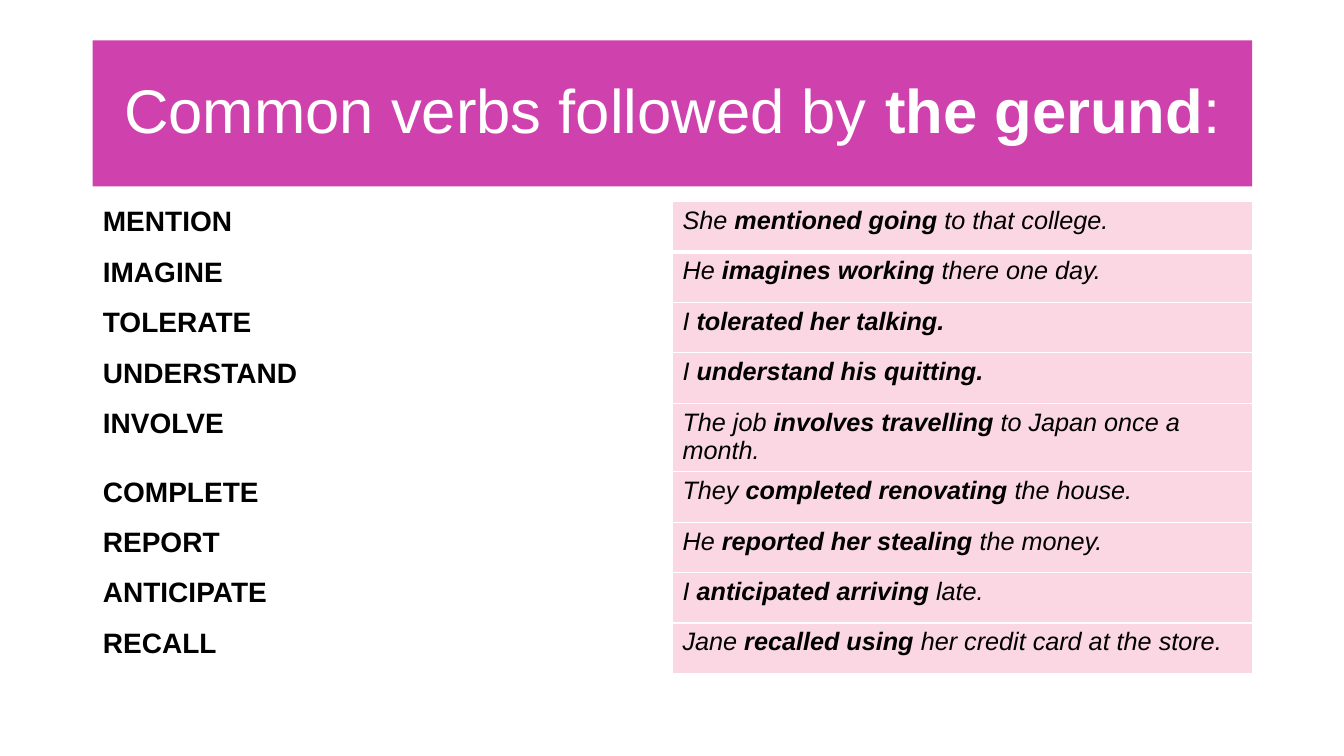
from lxml import etree
from pptx import Presentation
from pptx import util as u
from pptx.dml.color import RGBColor
from pptx.enum import shapes, text
from pptx.oxml import ns

TITLE = ("Common verbs followed by ", "the gerund", ":")
VERBS = [
    ("MENTION", ("She ", "mentioned going ", "to that college.")),
    ("IMAGINE", ("He ", "imagines working ", "there one day.")),
    ("TOLERATE", ("I ", "tolerated her talking.")),
    ("UNDERSTAND", ("I ", "understand his quitting.")),
    ("INVOLVE", ("The job ", "involves travelling ", "to Japan once a month.")),
    ("COMPLETE", ("They ", "completed renovating ", "the house.")),
    ("REPORT", ("He ", "reported her stealing ", "the money.")),
    ("ANTICIPATE", ("I ", "anticipated arriving ", "late.")),
    ("RECALL", ("Jane ", "recalled using ", "her credit card at the store.")),
]
THEME = dict(
    font="Arial", white="FFFFFF", ink="000000", banner="CF41AD", example="FAD7E3",
    title_size=44, verb_size=20, example_size=18, thin=1, thick=3,
)
LEFT, WIDTH = 0.92, 11.5
ROW, TALL_ROW = 0.5, 0.68


def write(frame, parts, size, color, italic=False, align=None, spacing=None):
    para = frame.paragraphs[0]
    para.alignment = align
    para.line_spacing = spacing
    for index, words in enumerate(parts):
        span = para.add_run()
        span.text = words
        span.font.name = THEME["font"]
        span.font.size = u.Pt(size)
        span.font.bold = index == 1 or len(parts) == 1
        span.font.italic = italic
        span.font.color.rgb = RGBColor.from_string(color)


def paint(item, color):
    item.fill.solid()
    item.fill.fore_color.rgb = RGBColor.from_string(color)


def add_borders(cell, bottom):
    properties = cell._tc.get_or_add_tcPr()
    for side in "LRTB":
        points = bottom if side == "B" else THEME["thin"]
        line = etree.SubElement(properties, ns.qn(f"a:ln{side}"), w=str(u.Pt(points)))
        fill = etree.SubElement(line, ns.qn("a:solidFill"))
        etree.SubElement(fill, ns.qn("a:srgbClr"), val=THEME["white"])


def add_banner(page):
    box = page.shapes.add_shape(
        shapes.MSO_SHAPE.RECTANGLE,
        u.Inches(LEFT), u.Inches(0.4), u.Inches(WIDTH), u.Inches(1.45),
    )
    box.shadow.inherit = False
    box.line.fill.background()
    paint(box, THEME["banner"])
    box.text_frame.word_wrap = True
    box.text_frame.vertical_anchor = text.MSO_ANCHOR.MIDDLE
    write(box.text_frame, TITLE, THEME["title_size"], THEME["white"],
          align=text.PP_ALIGN.CENTER, spacing=0.9)


def add_verbs(page):
    heights = [TALL_ROW if verb == "INVOLVE" else ROW for verb, _ in VERBS]
    table = page.shapes.add_table(
        len(VERBS), 2,
        u.Inches(LEFT), u.Inches(2), u.Inches(WIDTH), u.Inches(sum(heights)),
    ).table
    for column in table.columns:
        column.width = u.Inches(WIDTH / 2)
    for index, (verb, example) in enumerate(VERBS):
        table.rows[index].height = u.Inches(heights[index])
        verb_cell, example_cell = table.rows[index].cells
        for cell, color in ((verb_cell, THEME["white"]), (example_cell, THEME["example"])):
            add_borders(cell, THEME["thin"] if index else THEME["thick"])
            paint(cell, color)
        write(verb_cell.text_frame, (verb,), THEME["verb_size"], THEME["ink"])
        write(example_cell.text_frame, example, THEME["example_size"], THEME["ink"], italic=True)


def main():
    deck = Presentation()
    deck.slide_width, deck.slide_height = u.Inches(13.33), u.Inches(7.5)
    page = deck.slides.add_slide(deck.slide_layouts[6])
    add_banner(page)
    add_verbs(page)
    deck.save("out.pptx")


if __name__ == "__main__":
    main()
